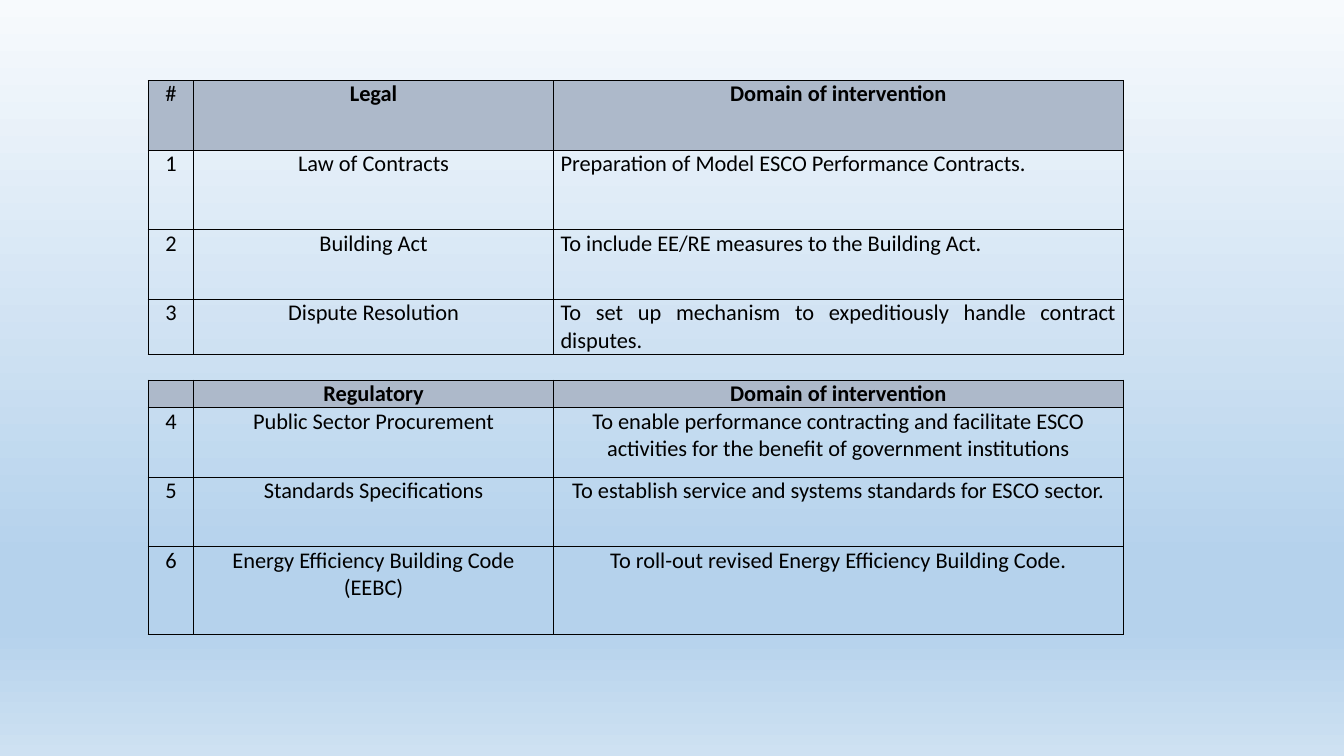
from lxml.etree import SubElement as Sub
from pptx import Presentation
from pptx.dml.color import RGBColor
from pptx.enum.text import PP_ALIGN as Align
from pptx.oxml.ns import qn
from pptx.util import Inches, Pt

BLACK = RGBColor(0x00, 0x00, 0x00)
HEAD = RGBColor(0xAD, 0xB9, 0xCA)
PALE = RGBColor(0xF7, 0xFA, 0xFD)
SKY = RGBColor(0xB5, 0xD2, 0xEC)
MIST = RGBColor(0xCE, 0xE1, 0xF2)

COLS = [0.45, 3.57, 5.65]
HIGH = [0.69, 0.79, 0.69, 0.54, 0.26, 0.27, 0.69, 0.69, 0.53, 0.33]
HEADS = (0, 5)
GAP = 4
LAST = 8
ROWS = [
    ("#", "Legal", "Domain of intervention"),
    ("1", "Law of Contracts", "Preparation of Model ESCO Performance Contracts."),
    ("2", "Building Act", "To include EE/RE measures to the Building Act."),
    ("3", "Dispute Resolution",
     "To set up mechanism to expeditiously handle contract disputes."),
    ("", "", ""),
    ("", "Regulatory", "Domain of intervention"),
    ("4", "Public Sector Procurement",
     "To enable performance contracting and facilitate ESCO activities "
     "for the benefit of government institutions"),
    ("5", "Standards Specifications",
     "To establish service and systems standards for ESCO sector."),
    ("6", "Energy Efficiency Building Code\n(EEBC)",
     "To roll-out revised Energy Efficiency Building Code."),
    ("", "", ""),
]


def tint(node, color):
    Sub(Sub(node, qn("a:solidFill")), qn("a:srgbClr"), val=str(color))


def edge(cell, sides):
    props = cell._tc.get_or_add_tcPr()
    for side in "LRTB":
        line = Sub(props, qn("a:ln" + side), w=str(Pt(1)))
        if side in sides:
            tint(line, BLACK)
        else:
            Sub(line, qn("a:noFill"))


deck = Presentation()
deck.slide_width = Inches(13.33)
deck.slide_height = Inches(7.5)
slide = deck.slides.add_slide(deck.slide_layouts[6])

back = slide.background.fill
back.gradient()
back.gradient_angle = 270
stops = slide._element.find(".//" + qn("a:gsLst"))
for stop in list(stops):
    stops.remove(stop)
for part, color in ((0, PALE), (74, SKY), (83, SKY), (100, MIST)):
    stop = Sub(stops, qn("a:gs"), pos=str(part * 1000))
    Sub(stop, qn("a:srgbClr"), val=str(color))

frame = slide.shapes.add_table(len(ROWS), len(COLS), Inches(1.47), Inches(0.8),
                               Inches(sum(COLS)), Inches(sum(HIGH)))
table = frame.table
table.first_row = False
table.horz_banding = False
for col, width in zip(table.columns, COLS):
    col.width = Inches(width)
for row, height in zip(table.rows, HIGH):
    row.height = Inches(height)

for r, texts in enumerate(ROWS):
    for c, text in enumerate(texts):
        cell = table.cell(r, c)
        cell.margin_left = cell.margin_right = Inches(0.07)
        cell.margin_top = cell.margin_bottom = 0
        sides = "LRTB"
        if r == GAP:
            sides = "TB"
        elif c == 1 and r >= LAST:
            sides = "LRT" if r == LAST else "LRB"
        edge(cell, sides)
        if r in HEADS:
            cell.fill.solid()
            cell.fill.fore_color.rgb = HEAD
        else:
            cell.fill.background()
        cell.text_frame.text = text
        for para in cell.text_frame.paragraphs:
            just = c == 2 and 0 < r < GAP
            para.alignment = Align.JUSTIFY if just else Align.CENTER
            for run in para.runs:
                run.font.name = "Calibri"
                run.font.size = Pt(16)
                run.font.bold = r in HEADS and text != "#"
                run.font.color.rgb = BLACK
            if not text:
                Sub(para._p, qn("a:endParaRPr"), sz="1400")

table.cell(GAP, 0).merge(table.cell(GAP, 2))
for c in (0, 2):
    table.cell(LAST, c).merge(table.cell(LAST + 1, c))

deck.save("out.pptx")
